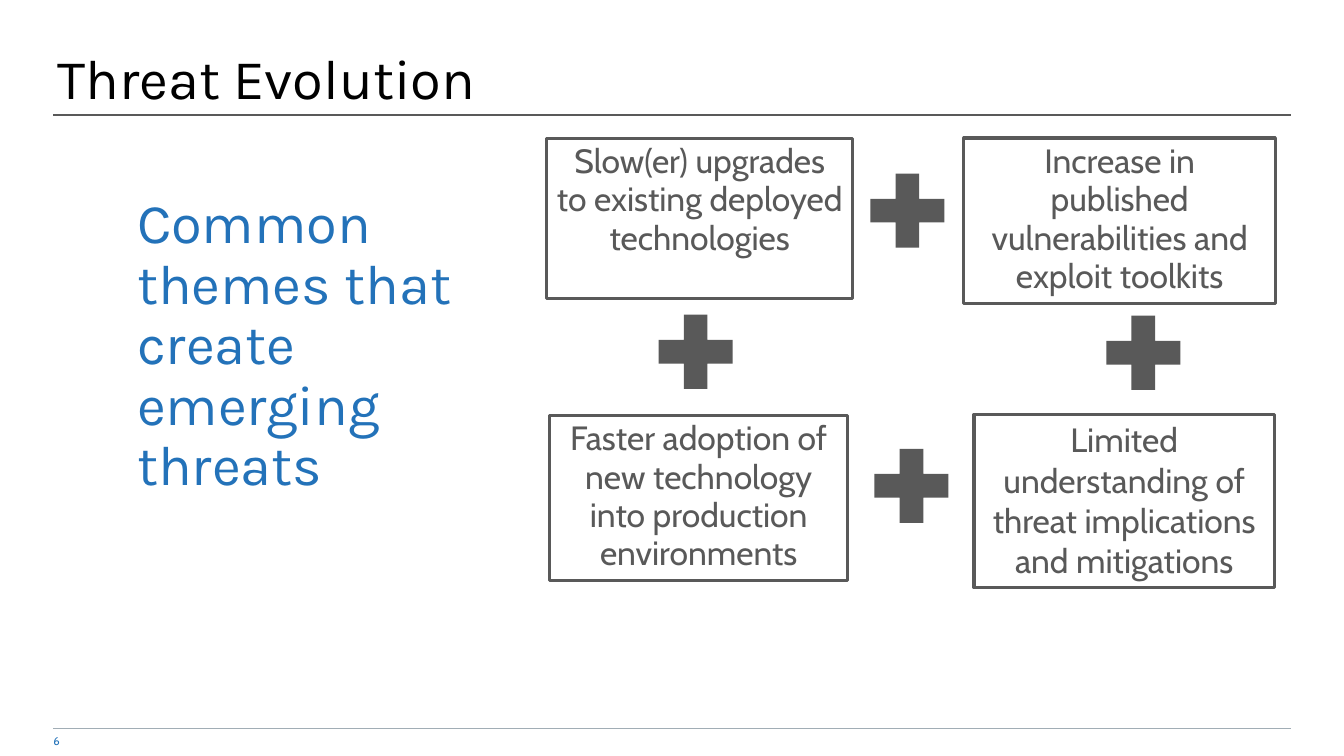
from lxml import etree
from pptx import Presentation
from pptx.dml.color import RGBColor
from pptx.enum import shapes, text
from pptx.oxml.ns import qn
from pptx.util import Inches, Pt

GREY = RGBColor(0x59, 0x59, 0x59)
RULE_GREY = RGBColor(0xA1, 0xAD, 0xB5)
BLUE = RGBColor(0x23, 0x72, 0xB9)
BLACK = RGBColor(0, 0, 0)

THEMES = [
    ("Slow(er) upgrades to existing deployed technologies", (5.42, 1.37, 3.04, 1.59), 0.95),
    ("Faster adoption of new technology into production environments", (5.45, 4.12, 2.96, 1.64), 0.95),
    ("Increase in published vulnerabilities and exploit toolkits", (9.56, 1.37, 3.09, 1.64), 0.95),
    ("Limited understanding of threat implications and mitigations", (9.66, 4.11, 2.98, 1.72), 1.0),
]
PLUS_SPOTS = [(8.5, 1.59), (8.54, 4.32), (6.4, 2.99), (10.84, 3)]


def write(sp, words, font, size, color, spacing, anchor, align):
    tf = sp.text_frame
    tf.word_wrap = True
    tf.vertical_anchor = anchor
    p = tf.paragraphs[0]
    p.text = words
    p.alignment = align
    p.line_spacing = spacing
    p.font.name = font
    p.font.size = Pt(size)
    p.font.color.rgb = color


def add_label(s, words, box, font, size, color, spacing=0.9, anchor=text.MSO_ANCHOR.BOTTOM):
    sp = s.shapes.add_textbox(*map(Inches, box))
    tf = sp.text_frame
    tf.margin_left = tf.margin_right = tf.margin_top = tf.margin_bottom = 0
    write(sp, words, font, size, color, spacing, anchor, text.PP_ALIGN.LEFT)


def add_rule(s, y, color):
    line = s.shapes.add_connector(
        shapes.MSO_CONNECTOR.STRAIGHT, Inches(0.53), Inches(y), Inches(12.8), Inches(y))
    line.line.color.rgb = color
    line.line.width = Pt(1)
    etree.SubElement(line._element.spPr, qn("a:effectLst"))


def add_theme(s, words, box, spacing):
    sp = s.shapes.add_shape(shapes.MSO_SHAPE.RECTANGLE, *map(Inches, box))
    sp.shadow.inherit = False
    sp.fill.background()
    sp.line.color.rgb = GREY
    sp.line.width = Pt(2.25)
    write(sp, words, "Cabin", 24, GREY, spacing, text.MSO_ANCHOR.TOP, text.PP_ALIGN.CENTER)


def add_plus(s, x, y):
    sp = s.shapes.add_shape(
        shapes.MSO_SHAPE.MATH_PLUS, Inches(x), Inches(y), Inches(1), Inches(1))
    sp.shadow.inherit = False
    sp.fill.solid()
    sp.fill.fore_color.rgb = GREY
    sp.line.fill.background()


def main():
    prs = Presentation()
    prs.slide_width = Inches(13.33)
    prs.slide_height = Inches(7.5)
    s = prs.slides.add_slide(prs.slide_layouts[6])

    add_rule(s, 1.14, GREY)
    add_rule(s, 7.23, RULE_GREY)
    add_label(s, "Common themes that create emerging threats",
              (1.36, 1.78, 3.79, 3.16), "Karla", 40, BLUE)
    for words, box, spacing in THEMES:
        add_theme(s, words, box, spacing)
    for x, y in PLUS_SPOTS:
        add_plus(s, x, y)
    add_label(s, "Threat Evolution", (0.57, 0.33, 12.22, 0.78), "Karla", 40, BLACK)
    add_label(s, "6", (0.53, 7.24, 0.5, 0.23), "Cabin", 8, BLUE, 1.0, text.MSO_ANCHOR.MIDDLE)

    prs.save("out.pptx")


if __name__ == "__main__":
    main()
